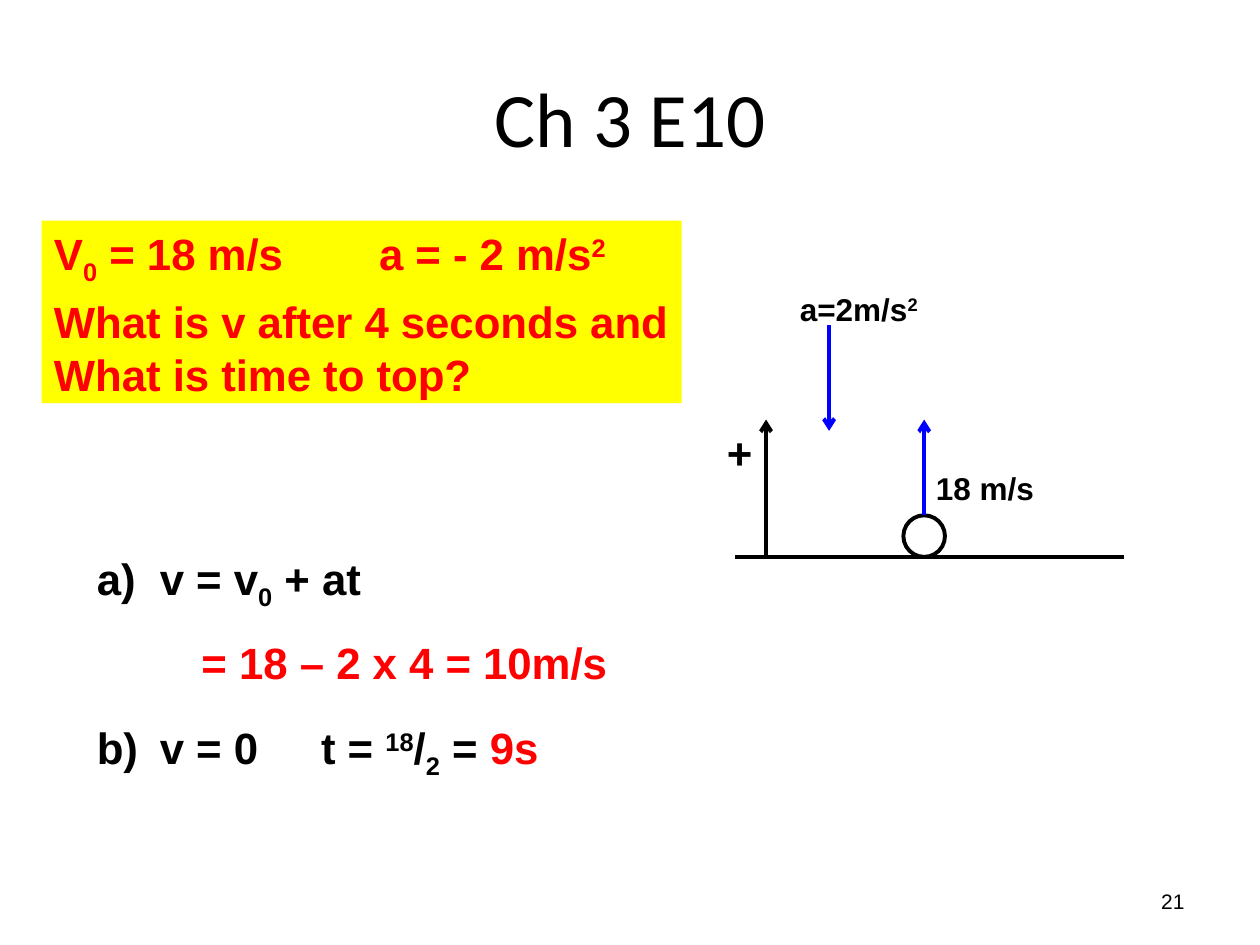
from dataclasses import dataclass

from pptx import Presentation
from pptx.dml.color import RGBColor
from pptx.enum.shapes import MSO_CONNECTOR as Connector, MSO_SHAPE as Shape
from pptx.enum.text import MSO_ANCHOR as Anchor, MSO_AUTO_SIZE as AutoSize, PP_ALIGN as Align
from pptx.oxml.ns import qn
from pptx.util import Inches, Pt
from lxml.etree import SubElement


@dataclass(frozen=True)
class Theme:
    black: RGBColor = RGBColor(0, 0, 0)
    red: RGBColor = RGBColor(255, 0, 0)
    blue: RGBColor = RGBColor(0, 0, 255)
    yellow: RGBColor = RGBColor(255, 255, 0)
    title_font: str = "Calibri"
    body_font: str = "Arial"
    title_size: float = 44
    body_size: float = 25
    label_size: float = 18
    number_size: float = 12
    line_width: float = 2.25


THEME = Theme()
SUB, SUPER = -25000, 30000


def add_text(shapes, box, paragraphs, size=THEME.body_size, font=THEME.body_font,
             color=THEME.black, bold=True, align=Align.LEFT, anchor=Anchor.TOP,
             fill=None, grow=True, space_before=0, tabs=()):
    shape = shapes.add_textbox(*map(Inches, box))
    if fill is not None:
        shape.fill.solid()
        shape.fill.fore_color.rgb = fill
    frame = shape.text_frame
    frame.word_wrap = True
    frame.auto_size = AutoSize.SHAPE_TO_FIT_TEXT if grow else AutoSize.NONE
    frame.vertical_anchor = anchor
    for index, runs in enumerate(paragraphs):
        paragraph = frame.add_paragraph() if index else frame.paragraphs[0]
        paragraph.alignment = align
        if index:
            paragraph.space_before = Pt(space_before)
        if tabs:
            tab_list = SubElement(paragraph._p.get_or_add_pPr(), qn("a:tabLst"))
            for position in tabs:
                SubElement(tab_list, qn("a:tab"), pos=str(Inches(position)), algn="l")
        for text, baseline, *run_color in runs:
            run = paragraph.add_run()
            run.text = text
            run.font.name = font
            run.font.size = Pt(size)
            run.font.bold = bold
            run.font.color.rgb = run_color[0] if run_color else color
            if baseline:
                run.font._element.set("baseline", str(baseline))
    return shape


def add_line(shapes, start, end, color=THEME.black, arrow=True):
    line = shapes.add_connector(Connector.STRAIGHT, *map(Inches, (*start, *end)))
    line.line.color.rgb = color
    line.line.width = Pt(THEME.line_width)
    if arrow:
        SubElement(line.line._get_or_add_ln(), qn("a:tailEnd"), type="arrow")
    SubElement(line._element.spPr, qn("a:effectLst"))
    return line


def add_title(slide, box):
    add_text(slide.shapes, box, [[("Ch 3 E10", 0)]], size=THEME.title_size,
             font=THEME.title_font, bold=False, align=Align.CENTER,
             anchor=Anchor.MIDDLE, grow=False)


def add_question(slide, box):
    given = [("V", 0), ("0", SUB), (" = 18 m/s\ta = - 2 m/s", 0), ("2", SUPER)]
    question = [("What is v after 4 seconds and What is time to top?", 0)]
    add_text(slide.shapes, box, [given, question], color=THEME.red,
             fill=THEME.yellow, space_before=5, tabs=[2.58])


def add_solution(slide, box):
    left, top, width, height = box
    row_step = 0.67
    rows = [
        (0, 2.67, [("a)\tv = v", 0), ("0", SUB), (" + at", 0)], [0.5]),
        (0.83, 3.58, [("= 18 – 2 x 4 = 10m/s", 0, THEME.red)], []),
        (0, width, [("b)\tv = 0\tt = ", 0), ("18", SUPER), ("/", 0), ("2", SUB),
                    (" = ", 0), ("9s", 0, THEME.red)], [0.5, 1.78]),
    ]
    for index, (indent, row_width, runs, tabs) in enumerate(rows):
        row_box = (left + indent, top + index * row_step, row_width, height)
        add_text(slide.shapes, row_box, [runs], tabs=tabs)


def add_diagram(slide, box):
    left, top, width, height = box
    shapes = slide.shapes.add_group_shape().shapes
    ground = top + height
    arrow_top = top + 0.75
    ball_size = 0.33
    ball_left = left + 1.34

    add_line(shapes, (left + width, ground), (left, ground), arrow=False)
    add_line(shapes, (left + 0.25, ground), (left + 0.25, arrow_top))
    add_line(shapes, (left + 0.75, top), (left + 0.75, top + 0.84), THEME.blue)

    ball = shapes.add_shape(Shape.OVAL, *map(Inches, (
        ball_left, ground - ball_size, ball_size, ball_size)))
    ball.shadow.inherit = False
    ball.fill.background()
    ball.line.color.rgb = THEME.black
    ball.line.width = Pt(THEME.line_width)

    ball_center = ball_left + ball_size / 2
    velocity = add_line(shapes, (ball_center, ground - ball_size),
                        (ball_center, arrow_top), THEME.blue)
    velocity.begin_connect(ball, 0)

    add_text(shapes, (left - 0.16, arrow_top, 0.42, 0.52), [[("+", 0)]])
    add_text(shapes, (left + 0.42, top - 0.33, 1.17, 0.4),
             [[("a=2m/s", 0), ("2", SUPER)]], size=THEME.label_size)
    add_text(shapes, (left + 1.5, top + 1.09, 1, 0.4),
             [[("18 m/s", 0)]], size=THEME.label_size)


def add_slide_number(slide, box):
    add_text(slide.shapes, box, [[("21", 0)]], size=THEME.number_size, bold=False,
             align=Align.RIGHT, anchor=Anchor.MIDDLE, grow=False)


def main():
    presentation = Presentation()
    presentation.slide_width = Inches(10)
    presentation.slide_height = Inches(7.5)
    slide = presentation.slides.add_slide(presentation.slide_layouts[6])
    add_slide_number(slide, (7.17, 6.95, 2.33, 0.4))
    add_title(slide, (0.5, 0.3, 9, 1.25))
    add_question(slide, (0.33, 1.75, 5.08, 1.45))
    add_solution(slide, (0.67, 4.33, 4.08, 0.52))
    add_diagram(slide, (5.83, 2.58, 3.09, 1.84))
    presentation.save("out.pptx")


if __name__ == "__main__":
    main()
